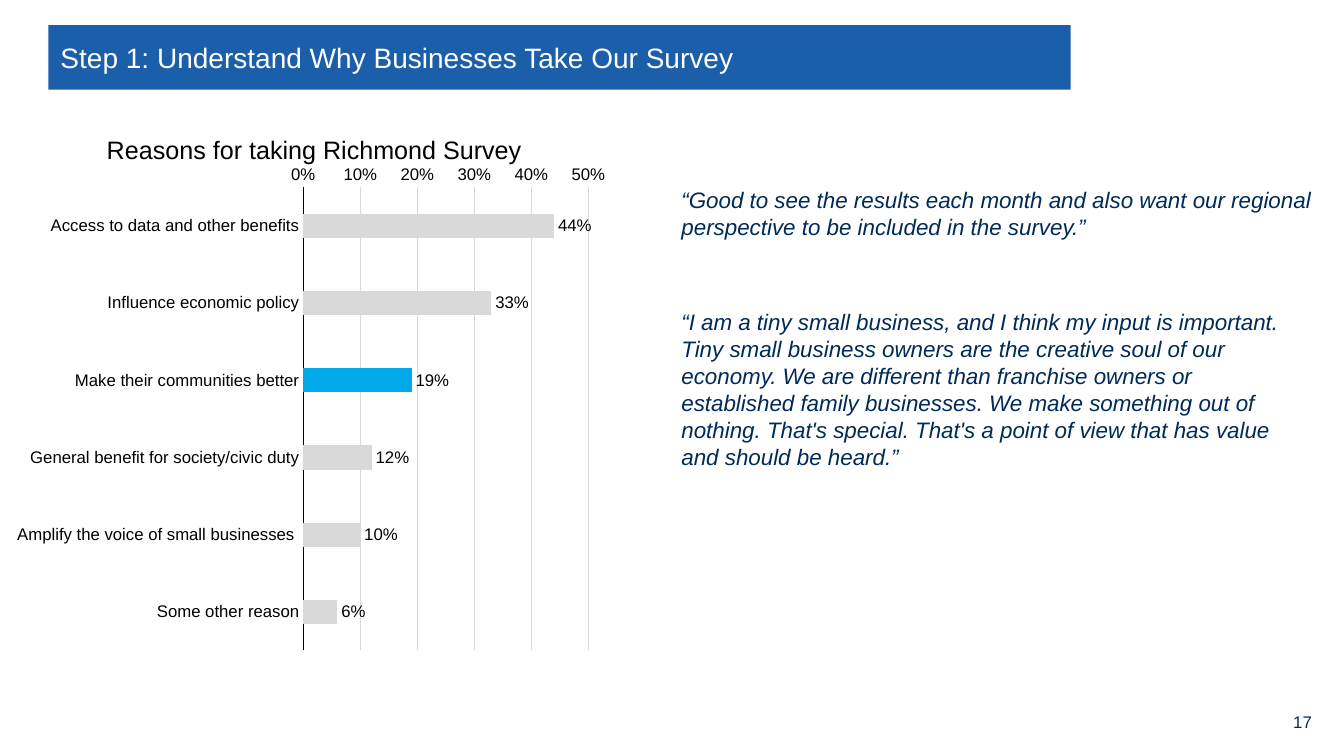
from lxml import etree
from pptx import Presentation
from pptx.chart.data import CategoryChartData
from pptx.dml.color import RGBColor
from pptx.enum.chart import XL_CHART_TYPE, XL_LABEL_POSITION, XL_TICK_MARK
from pptx.enum.shapes import MSO_SHAPE
from pptx.enum.text import MSO_ANCHOR, PP_ALIGN
from pptx.oxml.ns import qn
from pptx.util import Inches, Pt

FONT = "Arial"
COLORS = {
    "band": "1B5FAA",
    "white": "FFFFFF",
    "navy": "002A59",
    "black": "000000",
    "bar": "D9D9D9",
    "highlight": "00A9E7",
}
TITLE = "Step 1: Understand Why Businesses Take Our Survey"
PAGE_NUMBER = "17"
CHART_TITLE = "Reasons for taking Richmond Survey"
HIGHLIGHTED_REASON = "Make their communities better"
REASONS = {
    "Access to data and other benefits": 0.44,
    "Influence economic policy": 0.33,
    HIGHLIGHTED_REASON: 0.19,
    "General benefit for society/civic duty": 0.12,
    "Amplify the voice of small businesses ": 0.10,
    "Some other reason": 0.06,
}
QUOTES = [
    ("“Good to see the results each month and also want our regional "
     "perspective to be included in the survey.”", (6.66, 1.8, 6.45, 0.64)),
    ("“I am a tiny small business, and I think my input is important. Tiny "
     "small business owners are the creative soul of our economy. We are "
     "different than franchise owners or established family businesses. We "
     "make something out of nothing. That's special. That's a point of view "
     "that has value and should be heard.”", (6.66, 3.01, 6.33, 1.72)),
]


def color(name):
    return RGBColor.from_string(COLORS[name])


def set_font(font, size, color_name, italic=False):
    font.name = FONT
    font.size = Pt(size)
    font.bold = False
    font.italic = italic
    font.color.rgb = color(color_name)


def write(frame, text, size, color_name, italic=False,
          align=PP_ALIGN.LEFT, anchor=MSO_ANCHOR.TOP):
    frame.word_wrap = True
    frame.vertical_anchor = anchor
    para = frame.paragraphs[0]
    para.alignment = align
    span = para.add_run()
    span.text = text
    set_font(span.font, size, color_name, italic)


def add_text(page, text, place, **text_format):
    box = page.shapes.add_textbox(*map(Inches, place))
    write(box.text_frame, text, **text_format)


def add_title(page):
    band = page.shapes.add_shape(
        MSO_SHAPE.RECTANGLE, *map(Inches, (0.48, 0.25, 10.14, 0.64)))
    band.shadow.inherit = False
    band.fill.solid()
    band.fill.fore_color.rgb = color("band")
    band.line.fill.background()

    title = page.shapes.title
    title.left, title.top, title.width, title.height = map(
        Inches, (0.5, 0.28, 10.08, 0.58))
    write(title.text_frame, TITLE, 20, "white", anchor=MSO_ANCHOR.MIDDLE)
    title.element.addprevious(band.element)


def set_layout(parent, after, **settings):
    """Give a chart part a manual layout, placed after the named child."""
    for old in parent.findall(qn("c:layout")):
        parent.remove(old)
    layout = etree.Element(qn("c:layout"))
    manual = etree.SubElement(layout, qn("c:manualLayout"))
    for tag, value in settings.items():
        etree.SubElement(manual, qn(f"c:{tag}")).set("val", str(value))
    if after:
        parent.find(qn(after)).addnext(layout)
    else:
        parent.insert(0, layout)


def format_axes(chart):
    for axis in (chart.category_axis, chart.value_axis):
        axis.major_tick_mark = XL_TICK_MARK.NONE
        axis.minor_tick_mark = XL_TICK_MARK.NONE
        set_font(axis.tick_labels.font, 12, "black")
    reasons, shares = chart.category_axis, chart.value_axis
    reasons.reverse_order = True
    reasons.format.line.color.rgb = color("black")
    reasons.format.line.width = Pt(0.75)
    shares.minimum_scale, shares.maximum_scale, shares.major_unit = 0, 0.5, 0.1
    shares.tick_labels.number_format = "0%"
    shares.tick_labels.number_format_is_linked = False
    shares.format.line.fill.background()
    shares.major_gridlines.format.line.color.rgb = color("bar")
    shares.major_gridlines.format.line.width = Pt(0.75)


def format_bars(plot):
    plot.gap_width = 219
    plot.vary_by_categories = False
    series = plot.series[0]
    series.format.fill.solid()
    series.format.fill.fore_color.rgb = color("bar")
    point = series.points[list(REASONS).index(HIGHLIGHTED_REASON)]
    point.format.fill.solid()
    point.format.fill.fore_color.rgb = color("highlight")
    labels = series.data_labels
    labels.show_value = True
    labels.position = XL_LABEL_POSITION.OUTSIDE_END
    labels.number_format = "0%"
    labels.number_format_is_linked = False
    set_font(labels.font, 12, "black")


def add_reasons_chart(page):
    data = CategoryChartData(number_format="0%")
    data.categories = list(REASONS)
    data.add_series("Series 1", list(REASONS.values()))
    chart = page.shapes.add_chart(
        XL_CHART_TYPE.BAR_CLUSTERED,
        *map(Inches, (0.17, 1.06, 5.92, 5.55)), data).chart
    set_font(chart.font, 10, "navy")
    chart.has_legend = False
    title = chart.chart_title
    write_title = title.text_frame.paragraphs[0].add_run()
    write_title.text = CHART_TITLE
    set_font(write_title.font, 18, "black")
    title.include_in_layout = False
    format_axes(chart)
    format_bars(chart.plots[0])
    set_layout(title._element, "c:tx", xMode="edge", yMode="edge",
               x=0.14, y=0.04)
    set_layout(chart._chartSpace.chart.plotArea, None, layoutTarget="inner",
               xMode="edge", yMode="edge", x=0.478, y=0.144, w=0.479, h=0.828)


def main():
    deck = Presentation()
    deck.slide_width, deck.slide_height = Inches(13.33), Inches(7.5)
    page = deck.slides.add_slide(deck.slide_layouts.get_by_name("Title Only"))
    add_title(page)
    add_text(page, PAGE_NUMBER, (12.44, 7, 0.67, 0.33), size=12,
             color_name="navy", align=PP_ALIGN.RIGHT, anchor=MSO_ANCHOR.MIDDLE)
    add_reasons_chart(page)
    for quote, place in QUOTES:
        add_text(page, quote, place, size=16, color_name="navy", italic=True)
    deck.save("out.pptx")


if __name__ == "__main__":
    main()
